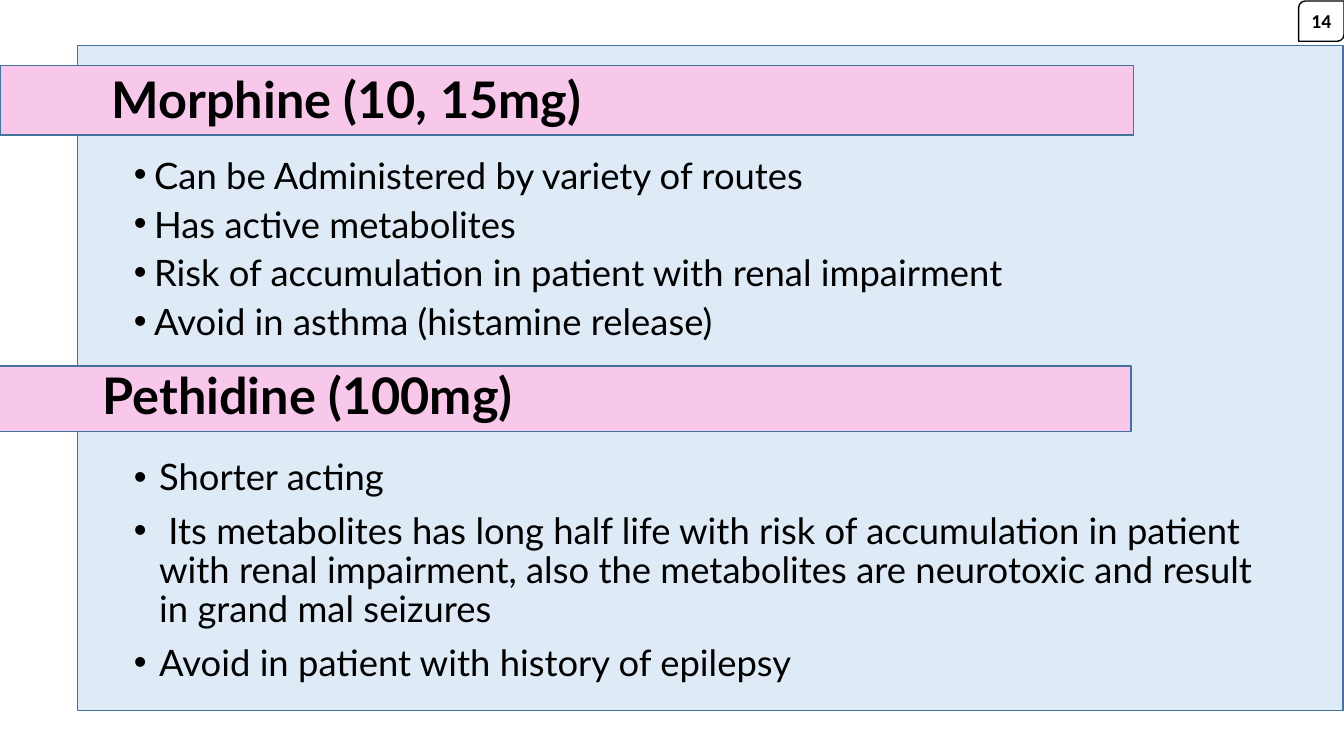
from lxml.etree import SubElement
from pptx import Presentation
from pptx.dml.color import RGBColor
from pptx.enum.shapes import MSO_SHAPE
from pptx.enum.text import MSO_ANCHOR, PP_ALIGN
from pptx.oxml.ns import qn
from pptx.util import Inches, Pt

COLORS = {
    "panel": "DEEBF7",
    "band": "F8C8EB",
    "outline": "43739E",
    "text": "000000",
    "badge": "FFFFFF",
}
HEADING = {"name": "Lato", "size": Pt(36), "bold": True}
BODY = {"name": "Lato", "size": Pt(26), "bold": False}
BADGE = {"name": "Calibri", "size": Pt(14), "bold": True}

WIDTH, HEIGHT = 13.33, 7.5
PANEL = (0.77, 0.45, 12.55, 6.6)
BADGE_BOX = (12.88, 0.01, 0.45, 0.4)
BAND_WIDTH = 11.24
HEADING_SIZE = (10.9, 0.85)
LIST_LEFT, LIST_WIDTH, LIST_HEIGHT = 1.23, 11.31, 2.36

DRUGS = [
    {
        "heading": "Morphine (10, 15mg)",
        "band": (0, 0.65, BAND_WIDTH, 0.69),
        "heading_at": (1.01, 0.59),
        "list_top": 1.55,
        "indent": 0.2,
        "line_spacing": 0.8,
        "points": [
            "Can be Administered by variety of routes",
            "Has active metabolites",
            "Risk of accumulation in patient with renal impairment",
            "Avoid in asthma (histamine release)",
        ],
    },
    {
        "heading": "Pethidine (100mg)",
        "band": (-0.02, 3.63, BAND_WIDTH, 0.65),
        "heading_at": (0.92, 3.53),
        "list_top": 4.51,
        "indent": 0.25,
        "line_spacing": 0.9,
        "points": [
            "Shorter acting",
            " Its metabolites has long half life with risk of accumulation in patient "
            "with renal impairment, also the metabolites are neurotoxic and result "
            "in grand mal seizures",
            "Avoid in patient with history of epilepsy",
        ],
    },
]


def color(name):
    return RGBColor.from_string(COLORS[name])


def add_box(slide, box, fill, line, kind=MSO_SHAPE.RECTANGLE):
    shape = slide.shapes.add_shape(kind, *map(Inches, box))
    shape.shadow.inherit = False
    shape.fill.solid()
    shape.fill.fore_color.rgb = color(fill)
    shape.line.color.rgb = color(line)
    shape.line.width = Pt(1)
    return shape


def add_text_frame(slide, box, anchor):
    frame = slide.shapes.add_textbox(*map(Inches, box)).text_frame
    frame.word_wrap = True
    frame.vertical_anchor = anchor
    return frame


def write(paragraph, text, font_format):
    paragraph.text = text
    for attribute, value in font_format.items():
        setattr(paragraph.font, attribute, value)
    paragraph.font.color.rgb = color("text")


def add_bullet(paragraph, indent):
    properties = paragraph._p.get_or_add_pPr()
    properties.set("marL", str(Inches(indent)))
    properties.set("indent", str(-Inches(indent)))
    SubElement(properties, qn("a:buFont"), typeface="Arial")
    SubElement(properties, qn("a:buChar"), char="•")


def add_drug(slide, drug):
    add_box(slide, drug["band"], "band", "outline")
    heading = add_text_frame(slide, drug["heading_at"] + HEADING_SIZE, MSO_ANCHOR.MIDDLE)
    heading.paragraphs[0].line_spacing = 0.9
    write(heading.paragraphs[0], drug["heading"], HEADING)

    list_box = (LIST_LEFT, drug["list_top"], LIST_WIDTH, LIST_HEIGHT)
    frame = add_text_frame(slide, list_box, MSO_ANCHOR.TOP)
    for index, point in enumerate(drug["points"]):
        paragraph = frame.add_paragraph() if index else frame.paragraphs[0]
        add_bullet(paragraph, drug["indent"])
        paragraph.line_spacing = drug["line_spacing"]
        paragraph.space_before = Pt(10 if index else 0)
        write(paragraph, point, BODY)


def add_badge(slide):
    badge = add_box(slide, BADGE_BOX, "badge", "text", MSO_SHAPE.ROUND_2_DIAG_RECTANGLE)
    frame = badge.text_frame
    frame.margin_left = frame.margin_right = 0
    frame.vertical_anchor = MSO_ANCHOR.MIDDLE
    frame.paragraphs[0].alignment = PP_ALIGN.CENTER
    write(frame.paragraphs[0], "14", BADGE)


def main():
    presentation = Presentation()
    presentation.slide_width = Inches(WIDTH)
    presentation.slide_height = Inches(HEIGHT)
    slide = presentation.slides.add_slide(presentation.slide_layouts[6])
    add_box(slide, PANEL, "panel", "outline")
    for drug in DRUGS:
        add_drug(slide, drug)
    add_badge(slide)
    presentation.save("out.pptx")


if __name__ == "__main__":
    main()
